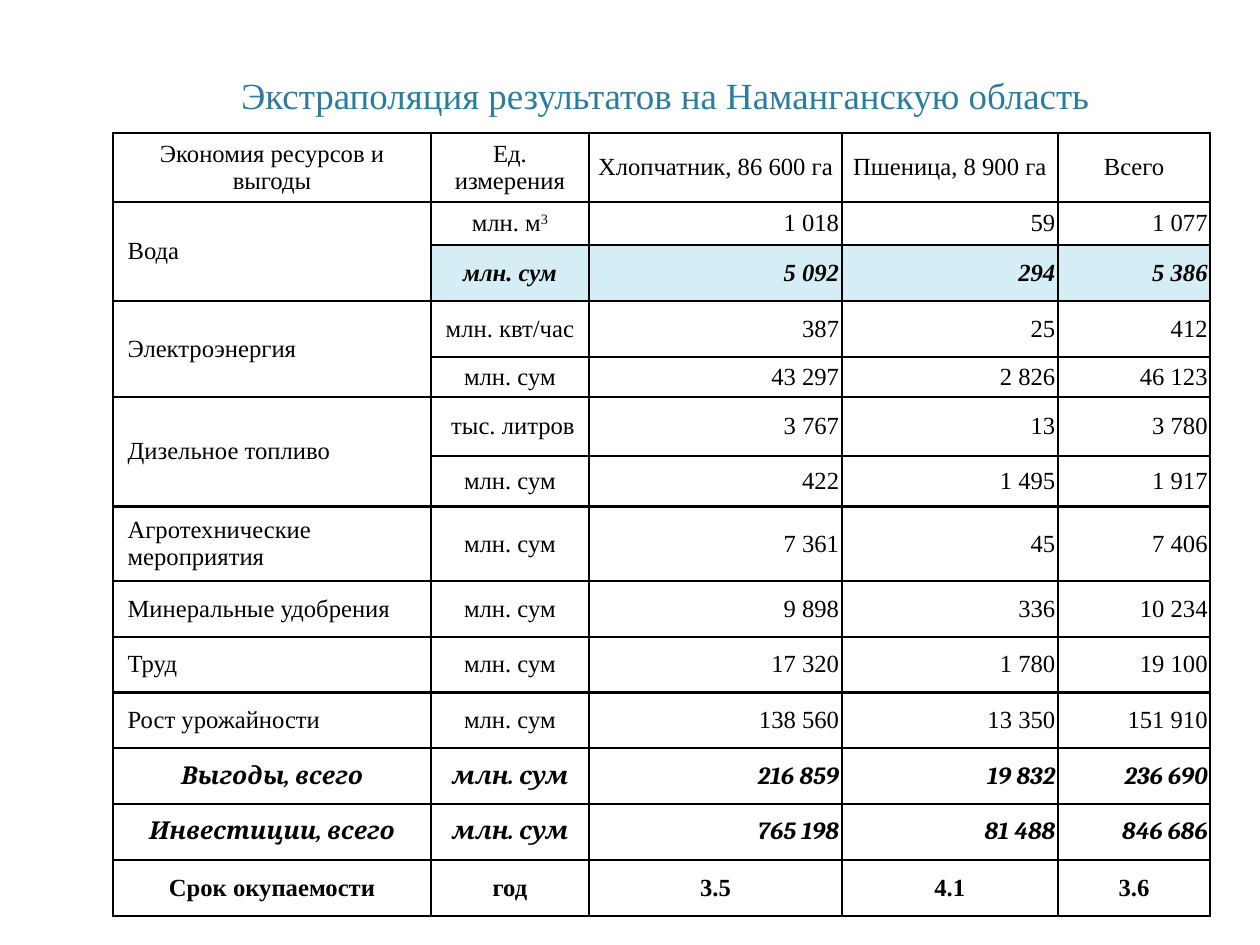
"""Build the slide that extrapolates savings and benefits to Namangan region."""
from dataclasses import dataclass

from lxml import etree
from pptx import Presentation
from pptx.dml.color import RGBColor
from pptx.enum.text import MSO_ANCHOR, MSO_AUTO_SIZE, PP_ALIGN
from pptx.oxml.ns import qn
from pptx.util import Inches, Pt

LEFT, MID, RIGHT = PP_ALIGN.LEFT, PP_ALIGN.CENTER, PP_ALIGN.RIGHT
CENTRE, BOTTOM = MSO_ANCHOR.MIDDLE, MSO_ANCHOR.BOTTOM
FIXED = MSO_AUTO_SIZE.NONE
BLACK = RGBColor(0x00, 0x00, 0x00)
WHITE = RGBColor(0xFF, 0xFF, 0xFF)
TEAL = RGBColor(0x2C, 0x7C, 0x9F)
PALE = RGBColor(0xD5, 0xED, 0xF4)
SERIF, ACCENT = "Times New Roman", "Cambria"
SIDES = ("left", "right", "top", "bottom")
WIDE, THIN = 0.06, 0.03
COLS = (3.58, 1.79, 2.85, 2.44, 1.72)


@dataclass(frozen=True)
class Style:
    """Hold the look of one table row."""
    font: str = SERIF
    bold: bool = False
    italic: bool = False
    fill: RGBColor = WHITE
    label: PP_ALIGN = LEFT
    value: PP_ALIGN = RIGHT
    pads: tuple[float, ...] = (WIDE, THIN, THIN, THIN, THIN)


@dataclass(frozen=True)
class Row:
    """Hold the texts, height and look of one table row."""
    texts: tuple[str, ...]
    high: float = 0.63
    style: Style = Style()
    power: str = ""


HEAD = Style(label=MID, value=MID, pads=(WIDE,) * 5)
MARK = Style(bold=True, italic=True, fill=PALE)
TOTAL = Style(font=ACCENT, bold=True, italic=True, label=MID)
TERM = Style(bold=True, label=MID, value=MID, pads=(WIDE, WIDE, THIN, THIN, THIN))
SUM = "млн. сум"
ROWS = (
    Row(("Экономия ресурсов и выгоды", "Ед. измерения", "Хлопчатник, 86 600 га",
         "Пшеница, 8 900 га", "Всего"), 0.78, HEAD),
    Row(("Вода", "млн. м", "1 018", "59", "1 077"), 0.49, power="3"),
    Row(("", SUM, "5 092", "294", "5 386"), style=MARK),
    Row(("Электроэнергия", "млн. квт/час", "387", "25", "412")),
    Row(("", SUM, "43 297", "2 826", "46 123"), 0.45),
    Row(("Дизельное топливо", " тыс. литров", "3 767", "13", "3 780"), 0.67),
    Row(("", SUM, "422", "1 495", "1 917"), 0.57),
    Row(("Агротехнические мероприятия", SUM, "7 361", "45", "7 406"), 0.84),
    Row(("Минеральные удобрения", SUM, "9 898", "336", "10 234")),
    Row(("Труд", SUM, "17 320", "1 780", "19 100")),
    Row(("Рост урожайности", SUM, "138 560", "13 350", "151 910")),
    Row(("Выгоды, всего", SUM, "216 859", "19 832", "236 690"), style=TOTAL),
    Row(("Инвестиции, всего", SUM, "765 198", "81 488", "846 686"), style=TOTAL),
    Row(("Cрок окупаемости", "год", "3.5", "4.1", "3.6"), style=TERM),
)


def apply(item, form: dict) -> None:
    """Set each attribute named in the form."""
    for name, value in form.items():
        setattr(item, name, value)


def write(para, text: str, size: float, color: RGBColor, style: Style):
    """Add a formatted run and return it."""
    run = para.add_run()
    run.text = text
    apply(run.font, {"name": style.font, "size": Pt(size),
                     "bold": style.bold, "italic": style.italic})
    run.font.color.rgb = color
    return run


def frame(cell) -> None:
    """Draw black lines on all sides of a cell."""
    props = cell._tc.get_or_add_tcPr()
    for side in SIDES:
        line = etree.SubElement(props, qn("a:ln" + side[0].upper()), w=str(Pt(2)))
        fill = etree.SubElement(line, qn("a:solidFill"))
        etree.SubElement(fill, qn("a:srgbClr"), val=str(BLACK))


def draw_cell(cell, row: Row, col: int) -> None:
    """Format one cell and write its text."""
    style = row.style
    pad = Inches(style.pads[col])
    apply(cell, {"margin_" + side: pad for side in SIDES})
    cell.vertical_anchor = CENTRE
    frame(cell)
    cell.fill.solid()
    cell.fill.fore_color.rgb = style.fill if col else WHITE
    if not row.texts[col]:
        return
    para = cell.text_frame.paragraphs[0]
    para.alignment = (style.label, MID, style.value)[min(col, 2)]
    if para.alignment == LEFT:
        para._p.get_or_add_pPr().set("marL", str(Inches(0.1)))
    write(para, row.texts[col], 20, BLACK, style)
    if col == 1 and row.power:
        run = write(para, row.power, 20, BLACK, style)
        run._r.get_or_add_rPr().set("baseline", "32000")


def draw_table(slide) -> None:
    """Add the table of savings."""
    high = sum(row.high for row in ROWS)
    table = slide.shapes.add_table(
        len(ROWS), len(COLS), Inches(1.28), Inches(1.5),
        Inches(sum(COLS)), Inches(high)).table
    apply(table, {"first_row": False, "horz_banding": False})
    for col, width in enumerate(COLS):
        table.columns[col].width = Inches(width)
    for pos, row in enumerate(ROWS):
        table.rows[pos].height = Inches(row.high)
        for col in range(len(COLS)):
            draw_cell(table.cell(pos, col), row, col)
        if not row.texts[0]:
            table.cell(pos - 1, 0).merge(table.cell(pos, 0))


def draw_title(slide) -> None:
    """Place and write the title."""
    title = slide.shapes.title
    apply(title, {"left": Inches(1.39), "top": Inches(0.28),
                  "width": Inches(12.24), "height": Inches(1.11)})
    body = title.text_frame
    apply(body, {"margin_left": Inches(0.14), "margin_right": Inches(0.14),
                 "margin_top": Inches(0.07), "margin_bottom": Inches(0.07),
                 "vertical_anchor": BOTTOM, "word_wrap": True, "auto_size": FIXED})
    para = body.paragraphs[0]
    para.alignment = MID
    write(para, "Экстраполяция результатов на Наманганскую область", 30, TEAL, Style())


def main() -> None:
    """Build and save the deck."""
    deck = Presentation()
    apply(deck, {"slide_width": Inches(14.22), "slide_height": Inches(10.67)})
    slide = deck.slides.add_slide(deck.slide_layouts[5])
    draw_title(slide)
    draw_table(slide)
    deck.save("out.pptx")


if __name__ == "__main__":
    main()
